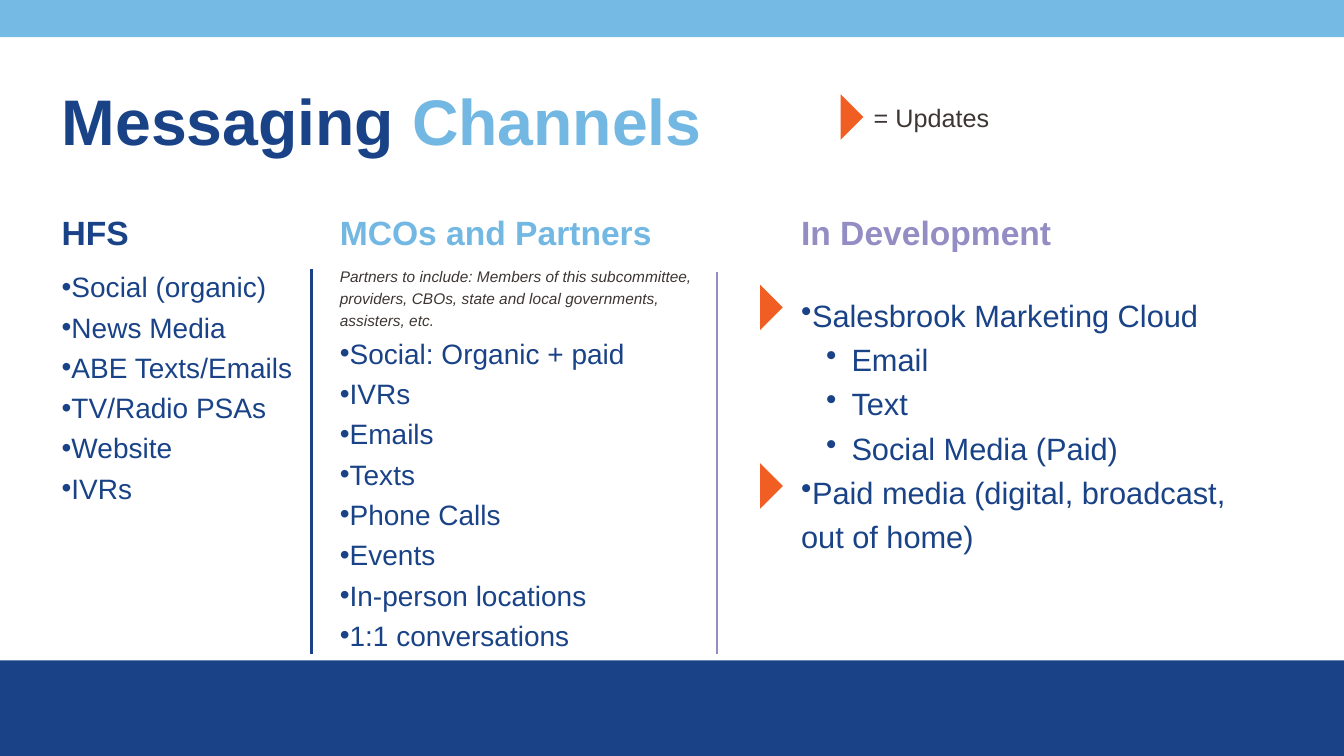
import lxml.etree
import pptx
import pptx.dml.color
import pptx.enum.shapes
import pptx.enum.text
import pptx.oxml.ns
import pptx.util

Cm = pptx.util.Cm
Pt = pptx.util.Pt
SHAPES = pptx.enum.shapes.MSO_SHAPE
ANCHORS = pptx.enum.text.MSO_ANCHOR
WIDTH, HEIGHT = 33.87, 19.05
COLORS = {"navy": "1A4387", "divider": "1C4285", "bar": "75B9E5", "sky": "73B8E3",
          "lilac": "938DC4", "orange": "F15E23", "ink": "3D3633"}


def rgb(color):
    """Return the named colour."""
    return pptx.dml.color.RGBColor.from_string(COLORS[color])


def place(part, box):
    """Move a part to its left, top, width and height in centimetres."""
    for side, length in zip(("left", "top", "width", "height"), box):
        setattr(part, side, Cm(length))


def prepare(holder, box, anchor):
    """Place a text holder and return its wrapped, fixed-size frame."""
    place(holder, box)
    frame = holder.text_frame
    formats = {"word_wrap": True, "vertical_anchor": anchor,
               "auto_size": pptx.enum.text.MSO_AUTO_SIZE.NONE}
    for name, value in formats.items():
        setattr(frame, name, value)
    return frame


def write(paragraph, words, size, color, spacing=1.0, bold=False, italic=False):
    """Append a formatted run to a left-aligned paragraph."""
    layout = {"alignment": pptx.enum.text.PP_ALIGN.LEFT, "line_spacing": spacing,
              "space_before": Pt(0), "space_after": Pt(0)}
    for name, value in layout.items():
        setattr(paragraph, name, value)
    run = paragraph.add_run()
    run.text = words
    formats = {"name": "Arial", "size": Pt(size), "bold": bold, "italic": italic}
    for name, value in formats.items():
        setattr(run.font, name, value)
    run.font.color.rgb = rgb(color)


def set_bullet(paragraph, level, bulleted):
    """Set the indent and the bullet of a paragraph."""
    paragraph.level = level
    properties = paragraph._p.get_or_add_pPr()
    properties.set("marL", str(Cm(1.27 * level)))
    properties.set("indent", str(Cm(-0.64 * level)))
    tag = pptx.oxml.ns.qn("a:buChar" if bulleted else "a:buNone")
    bullet = lxml.etree.SubElement(properties, tag)
    if bulleted:
        bullet.set("char", "•")


def add_block(slide, box, color):
    """Draw a plain filled rectangle."""
    add_filled(slide, SHAPES.RECTANGLE, box, color)


def add_filled(slide, outline, box, color):
    """Draw a preset shape with a fill and no line."""
    shape = slide.shapes.add_shape(outline, *map(Cm, box))
    shape.shadow.inherit = False
    shape.fill.solid()
    shape.fill.fore_color.rgb = rgb(color)
    shape.line.fill.background()
    return shape


def add_update_marker(slide, left, top):
    """Draw the triangle that marks an update."""
    marker = add_filled(slide, SHAPES.RIGHT_TRIANGLE, (left, top, 0.81, 0.81), "orange")
    marker.rotation = 225


def add_divider(slide, left, top, color):
    """Draw a vertical rule down to the foot of the columns."""
    rule = slide.shapes.add_connector(pptx.enum.shapes.MSO_CONNECTOR.STRAIGHT,
                                      Cm(left), Cm(top), Cm(left), Cm(16.48))
    rule.line.color.rgb = rgb(color)
    rule.line.width = Pt(1.5)
    lxml.etree.SubElement(rule._element.spPr, pptx.oxml.ns.qn("a:effectLst"))


def add_title(slide, box):
    """Write the two-colour title."""
    frame = prepare(slide.shapes.title, box, ANCHORS.BOTTOM)
    for words, color in (("Messaging ", "navy"), ("Channels", "sky")):
        write(frame.paragraphs[0], words, 46, color, bold=True)


def add_legend(slide, box):
    """Explain the update marker."""
    left, top, width, height = box
    add_update_marker(slide, left, top + 0.08)
    label = slide.shapes.add_textbox(0, 0, 0, 0)
    frame = prepare(label, (left + 0.99, top, width - 0.99, height), ANCHORS.TOP)
    write(frame.paragraphs[0], "= Updates", 18, "ink")


def add_column(slide, box, holders, heading, color, channels, size=20, gap=0.0, note=None):
    """Fill a column with a heading, an optional note and a channel list."""
    left, top, width, height = box
    heading_holder, list_holder = holders
    frame = prepare(heading_holder, (left, top, width, 1.42), ANCHORS.BOTTOM)
    write(frame.paragraphs[0], heading, 24, color, 0.9, bold=True)
    list_top = top + 1.42 + gap
    frame = prepare(list_holder, (left, list_top, width, height - 1.42), ANCHORS.TOP)
    entries = [(0, channel) if isinstance(channel, str) else channel for channel in channels]
    if note:
        entries.insert(0, (0, note))
    for index, (level, words) in enumerate(entries):
        paragraph = frame.paragraphs[0] if index == 0 else frame.add_paragraph()
        is_note = words == note
        set_bullet(paragraph, level, not is_note)
        write(paragraph, words, 11 if is_note else size, "ink" if is_note else "navy",
              1.2, italic=is_note)


def build_channels(slide):
    """Lay out the messaging channels slide."""
    add_block(slide, (0, 16.64, WIDTH, HEIGHT - 16.64), "navy")
    add_block(slide, (0, 0, WIDTH, 0.94), "bar")
    add_title(slide, (1.3, 1.83, 18.5, 2.29))
    add_legend(slide, (20.78, 2.46, 5.92, 1.02))
    parts = {holder.placeholder_format.idx: holder for holder in slide.placeholders}
    add_column(slide, (1.3, 5.08, 7.87, 11.58), (parts[1], parts[2]), "HFS", "navy",
               ["Social (organic)", "News Media", "ABE Texts/Emails", "TV/Radio PSAs",
                "Website", "IVRs"])
    add_column(slide, (8.31, 5.08, 10.16, 11.58), (parts[3], parts[4]),
               "MCOs and Partners", "sky",
               ["Social: Organic + paid", "IVRs", "Emails", "Texts", "Phone Calls",
                "Events", "In-person locations", "1:1 conversations"],
               note="Partners to include: Members of this subcommittee, providers, CBOs, "
                    "state and local governments, assisters, etc.")
    development = [slide.shapes.add_textbox(0, 0, 0, 0) for _ in range(2)]
    add_column(slide, (19.94, 5.08, 11.99, 11.58), development, "In Development", "lilac",
               ["Salesbrook Marketing Cloud", (1, "Email"), (1, "Text"),
                (1, "Social Media (Paid)"), "Paid media (digital, broadcast, out of home)"],
               size=22, gap=0.66)
    for top in (7.34, 11.84):
        add_update_marker(slide, 18.75, top)
    add_divider(slide, 7.85, 6.78, "divider")
    add_divider(slide, 18.08, 6.86, "lilac")


def main():
    """Build and save the presentation."""
    deck = pptx.Presentation()
    deck.slide_width, deck.slide_height = Cm(WIDTH), Cm(HEIGHT)
    build_channels(deck.slides.add_slide(deck.slide_layouts.get_by_name("Comparison")))
    deck.save("out.pptx")


if __name__ == "__main__":
    main()
